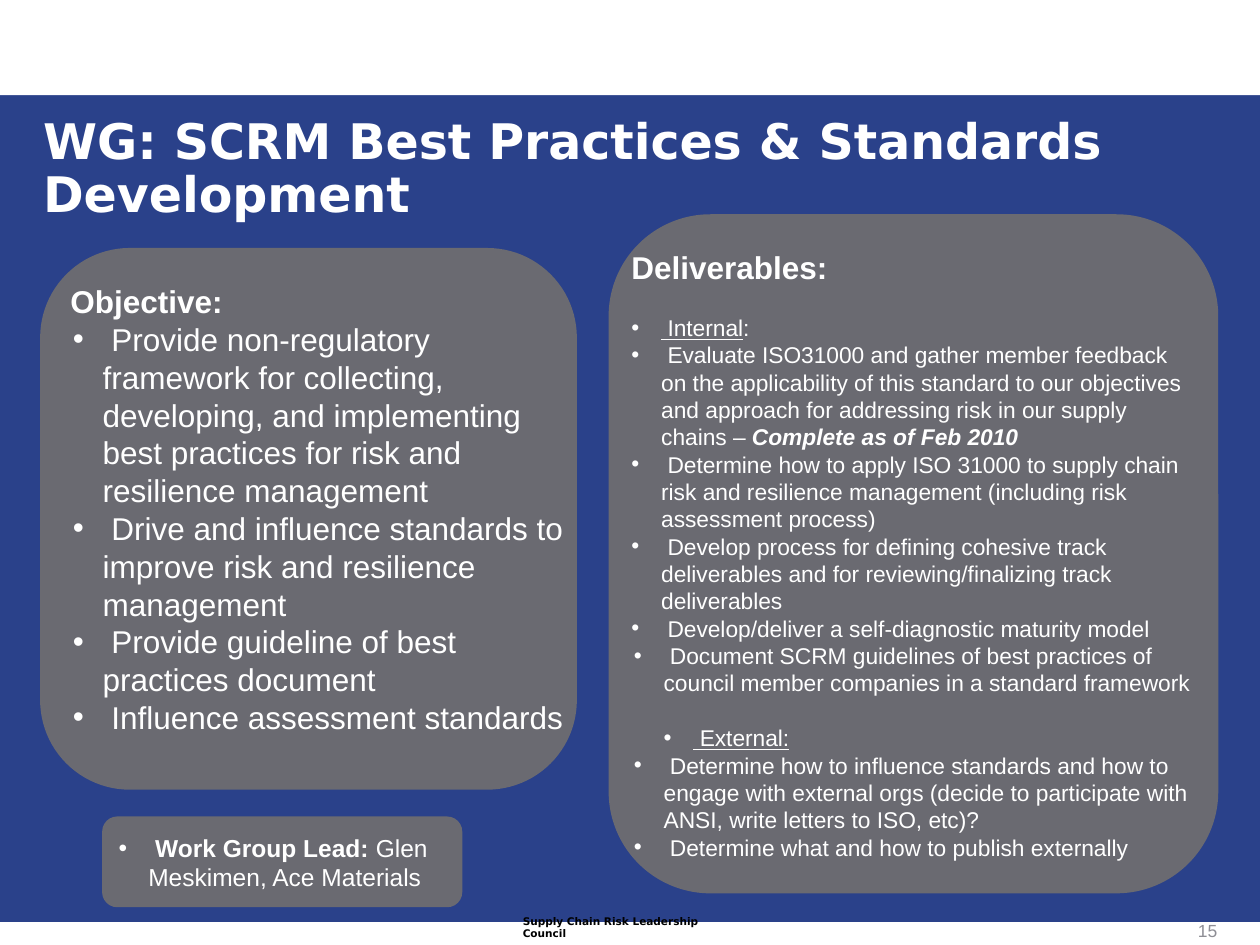
from lxml.etree import SubElement
from pptx import Presentation
from pptx.dml.color import RGBColor
from pptx.enum.shapes import MSO_SHAPE as Shape
from pptx.enum.text import MSO_ANCHOR as Anchor, MSO_AUTO_SIZE as AutoSize, PP_ALIGN as Align
from pptx.oxml.ns import qn
from pptx.util import Cm, Pt

BLUE = RGBColor(0x2A, 0x41, 0x8A)
GRAY = RGBColor(0x6A, 0x6A, 0x71)
PALE_GRAY = RGBColor(0x8E, 0x8E, 0x95)
WHITE = RGBColor(0xFF, 0xFF, 0xFF)
BLACK = RGBColor(0, 0, 0)

OUTER = (0.6, 0.6)
INNER = (0.65, 0.6)
NESTED = (1.25, 0.6)


def add_block(slide, kind, box, color):
    """Add a plain filled shape in a box given in centimetres."""
    shape = slide.shapes.add_shape(kind, *map(Cm, box))
    shape.shadow.inherit = False
    shape.fill.solid()
    shape.fill.fore_color.rgb = color
    shape.line.fill.background()
    if kind == Shape.ROUNDED_RECTANGLE:
        shape.adjustments[0] = 0.167
    return shape


def prepare_frame(frame, margins=(0, 0, 0, 0), anchor=Anchor.TOP):
    """Set wrapping, anchor and margins (left, top, right, bottom) of a text frame."""
    frame.word_wrap = True
    frame.auto_size = AutoSize.NONE
    frame.vertical_anchor = anchor
    (frame.margin_left, frame.margin_top,
     frame.margin_right, frame.margin_bottom) = map(Cm, margins)
    return frame


def add_run(paragraph, text, size, font="Arial", color=WHITE, bold=False, italic=False,
            underline=False):
    """Append a formatted run to a paragraph."""
    run = paragraph.add_run()
    run.text = text
    run.font.name = font
    run.font.size = Pt(size)
    run.font.color.rgb = color
    run.font.bold = bold
    run.font.italic = italic
    run.font.underline = underline


def add_paragraph(frame, runs, size, indent=None, before=0, spacing=1.0):
    """Add a paragraph of (text, format) runs, bulleted when an indent is given."""
    first = not frame.paragraphs[0].runs
    paragraph = frame.paragraphs[0] if first else frame.add_paragraph()
    paragraph.alignment = Align.LEFT
    paragraph.line_spacing = spacing
    paragraph.space_before = Pt(before)
    paragraph.space_after = Pt(0)
    if indent:
        margin, hanging = indent
        properties = paragraph._p.get_or_add_pPr()
        properties.set("marL", str(Cm(margin)))
        properties.set("indent", str(-Cm(hanging)))
        SubElement(properties, qn("a:buFont"), typeface="Arial")
        SubElement(properties, qn("a:buChar"), char="•")
    for text, style in runs:
        add_run(paragraph, text, size, **style)


def add_panel(slide, box, insets):
    """Add a rounded panel and return the text frame inset in it."""
    left, top, width, height = box
    inset_left, inset_top, inset_right, inset_bottom = insets
    add_block(slide, Shape.ROUNDED_RECTANGLE, box, GRAY)
    text_box = slide.shapes.add_textbox(
        Cm(left + inset_left), Cm(top + inset_top),
        Cm(width - inset_left - inset_right), Cm(height - inset_top - inset_bottom))
    return prepare_frame(text_box.text_frame)


def add_title(slide, box):
    """Place and format the title placeholder."""
    title = slide.shapes.title
    title.left, title.top, title.width, title.height = map(Cm, box)
    frame = prepare_frame(title.text_frame, (0.23, 0.1, 0.23, 0.36))
    add_paragraph(frame, [("WG: SCRM Best Practices & Standards Development",
                           {"font": "DejaVu Sans", "bold": True})], 28, spacing=0.9)


def add_objective(slide, box):
    """Add the objective panel."""
    frame = add_panel(slide, box, (0.61, 0.69, 0.18, 0.3))
    add_paragraph(frame, [("Objective:", {"bold": True})], 18)
    for text in (
        " Provide non-regulatory framework for collecting, developing, and implementing "
        "best practices for risk and resilience management",
        " Drive and influence standards to improve risk and resilience management",
        " Provide guideline of best practices document",
        " Influence assessment standards",
    ):
        add_paragraph(frame, [(text, {})], 18, INNER)


def add_deliverables(slide, box):
    """Add the deliverables panel with its internal and external lists."""
    frame = add_panel(slide, box, (0.46, 0.69, 0.53, 0.23))
    add_paragraph(frame, [("Deliverables:", {"bold": True})], 18)
    underlined = {"underline": True}
    for runs, indent, before in (
        ([(" Internal", underlined), (":", {})], OUTER, 15.7),
        ([(" Evaluate ISO31000 and gather member feedback on the applicability of this "
           "standard to our objectives and approach for addressing risk in our supply "
           "chains – ", {}),
          ("Complete as of Feb 2010", {"bold": True, "italic": True})], OUTER, 0),
        ([(" Determine how to apply ISO 31000 to supply chain risk and resilience "
           "management (including risk assessment process)", {})], OUTER, 0),
        ([(" Develop process for defining cohesive track deliverables and for "
           "reviewing/finalizing track deliverables", {})], OUTER, 0),
        ([(" Develop/deliver a self-diagnostic maturity model", {})], OUTER, 0),
        ([(" Document SCRM guidelines of best practices of council member companies in "
           "a standard framework", {})], INNER, 0),
        ([(" External:", underlined)], NESTED, 15.7),
        ([(" Determine how to influence standards and how to engage with external orgs "
           "(decide to participate with ANSI, write letters to ISO, etc)?", {})], INNER, 0),
        ([(" Determine what and how to publish externally", {})], INNER, 0),
    ):
        add_paragraph(frame, runs, 13, indent, before)


def add_lead(slide, box):
    """Add the work group lead panel."""
    frame = add_panel(slide, box, (0.33, 0.33, 0.61, 0.15))
    add_paragraph(frame, [(" Work Group Lead: ", {"bold": True}),
                          ("Glen Meskimen, Ace Materials", {})], 14, OUTER)


def add_footer_text(slide, box, text, size, align, **style):
    """Add one bottom-anchored footer text."""
    text_box = slide.shapes.add_textbox(*map(Cm, box))
    frame = prepare_frame(text_box.text_frame, (0.23, 0.1, 0.23, 0.1), Anchor.BOTTOM)
    add_paragraph(frame, [(text, style)], size)
    frame.paragraphs[0].alignment = align


def add_bands(slide):
    """Add the white bands and the footer texts."""
    add_block(slide, Shape.RECTANGLE, (0, 18.59, 25.4, 0.46), WHITE)
    add_block(slide, Shape.RECTANGLE, (0, 0, 25.4, 1.92), WHITE)
    add_footer_text(slide, (10.31, 18.57, 4.9, 0.48), "Supply Chain Risk Leadership Council",
                    6, Align.LEFT, font="DejaVu Sans", color=BLACK, bold=True)
    add_footer_text(slide, (23.88, 18.42, 0.89, 0.66), "15", 10, Align.RIGHT, color=PALE_GRAY)


def main():
    """Build and save the slide."""
    presentation = Presentation()
    presentation.slide_width, presentation.slide_height = Cm(25.4), Cm(19.05)
    slide = presentation.slides.add_slide(presentation.slide_layouts[5])
    slide.background.fill.solid()
    slide.background.fill.fore_color.rgb = BLUE
    add_bands(slide)
    add_title(slide, (0.64, 2.26, 23.65, 2.62))
    add_deliverables(slide, (12.27, 4.32, 12.29, 13.69))
    add_lead(slide, (2.06, 16.46, 7.26, 1.83))
    add_objective(slide, (0.81, 5, 10.82, 10.92))
    presentation.save("out.pptx")


if __name__ == "__main__":
    main()
